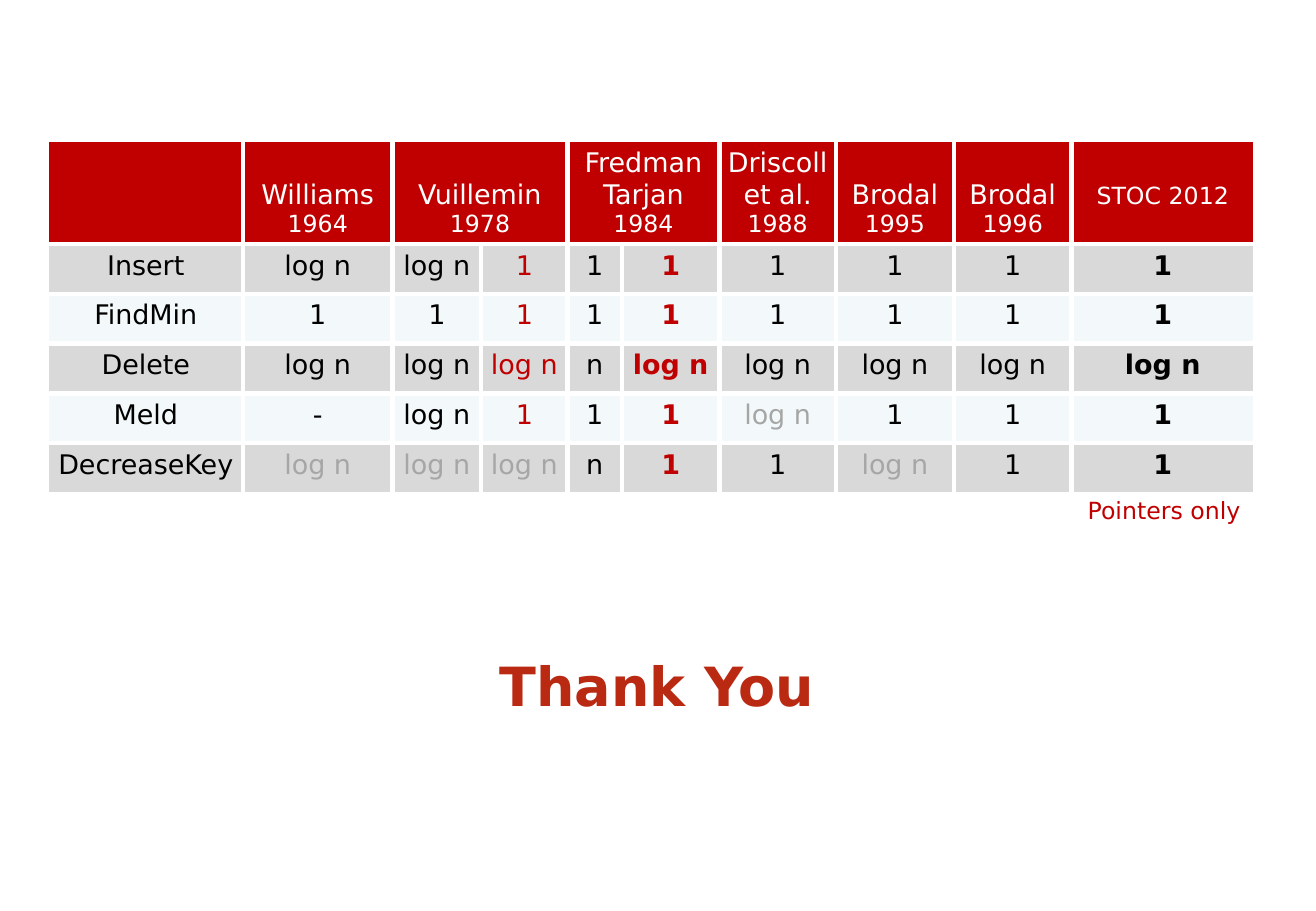
import pptx
import pptx.dml.color
import pptx.enum.text
import pptx.oxml
import pptx.oxml.ns
import pptx.util
from pptx.util import Inches

COLORS = {
    "header": "C00000", "band": "D9D9D9", "plain": "F3F9FA", "white": "FFFFFF",
    "black": "000000", "red": "C00000", "grey": "A6A6A6", "title": "BA2A12",
}
ANCHOR = pptx.enum.text.MSO_ANCHOR


def rgb(name):
    return pptx.dml.color.RGBColor.from_string(COLORS[name])


def write_lines(frame, lines, color, bold=False):
    """Write centred paragraphs from (text, size) pairs."""
    for index, (text, size) in enumerate(lines):
        para = frame.paragraphs[0] if index == 0 else frame.add_paragraph()
        para.alignment = pptx.enum.text.PP_ALIGN.CENTER
        span = para.add_run()
        span.text = text
        span.font.color.rgb = rgb(color)
        font_format = {"name": "DejaVu Sans", "size": pptx.util.Pt(size), "bold": bold}
        for key, value in font_format.items():
            setattr(span.font, key, value)


deck = pptx.Presentation()
deck.slide_width, deck.slide_height = Inches(10.83), Inches(7.5)
slide = deck.slides.add_slide(deck.slide_layouts[6])

# Table contents: header by first column, then one row per operation
headers = {
    1: [("Williams", 16), ("1964", 14)],
    2: [("Vuillemin", 16), ("1978", 14)],
    4: [("Fredman", 16), ("Tarjan", 16), ("1984", 14)],
    6: [("Driscoll", 16), ("et al.", 16), ("1988", 14)],
    7: [("Brodal", 16), ("1995", 14)],
    8: [("Brodal", 16), ("1996", 14)],
    9: [("STOC 2012", 14)],
}
operations = [
    ["Insert", "log n", "log n", "1", "1", "1", "1", "1", "1", "1"],
    ["FindMin", "1", "1", "1", "1", "1", "1", "1", "1", "1"],
    ["Delete", "log n", "log n", "log n", "n", "log n", "log n", "log n", "log n", "log n"],
    ["Meld", "-", "log n", "1", "1", "1", "log n", "1", "1", "1"],
    ["DecreaseKey", "log n", "log n", "log n", "n", "1", "1", "log n", "1", "1"],
]
grey_cells = {(4, 6), (5, 1), (5, 2), (5, 3), (5, 7)}
red_columns, bold_columns = {3, 5}, {5, 9}
column_widths = [1.6, 1.23, 0.73, 0.71, 0.45, 0.8, 0.96, 0.97, 0.97, 1.5]
row_heights = [0.85] + [0.41] * len(operations)
last_row, last_column = len(row_heights) - 1, len(column_widths) - 1

# Table grid
table = slide.shapes.add_table(
    len(row_heights), len(column_widths),
    Inches(0.4), Inches(1.16), Inches(9.93), Inches(2.9)).table
table.first_row = table.horz_banding = False
for column, width in zip(table.columns, column_widths):
    column.width = Inches(width)
for row, height in zip(table.rows, row_heights):
    row.height = Inches(height)
for first in (2, 4):
    table.cell(0, first).merge(table.cell(0, first + 1))

# Cells: margins, borders, fill and text
for r in range(last_row + 1):
    for c in range(last_column + 1):
        cell = table.cell(r, c)
        cell_format = {
            "margin_left": Inches(0.04), "margin_right": Inches(0.04),
            "margin_top": Inches(0.05), "margin_bottom": Inches(0.05),
            "vertical_anchor": ANCHOR.TOP if r else ANCHOR.BOTTOM,
        }
        if (r, c) == (0, last_column):
            cell_format["margin_bottom"] = Inches(0.28)
        for key, value in cell_format.items():
            setattr(cell, key, value)

        outer_edges = {"L": c == 0, "R": c == last_column, "T": r == 0, "B": r == last_row}
        for side, outer in outer_edges.items():
            width = pptx.util.Pt(1 if outer else 3)
            cell._tc.get_or_add_tcPr().append(pptx.oxml.parse_xml(
                f'<a:ln{side} {pptx.oxml.ns.nsdecls("a")} w="{width}"><a:solidFill>'
                f'<a:srgbClr val="{COLORS["white"]}"/></a:solidFill></a:ln{side}>'))

        cell.fill.solid()
        cell.fill.fore_color.rgb = rgb("header" if r == 0 else "band" if r % 2 else "plain")

        if r == 0:
            write_lines(cell.text_frame, headers.get(c, []), "white")
        else:
            color = "grey" if (r, c) in grey_cells else "red" if c in red_columns else "black"
            write_lines(cell.text_frame, [(operations[r - 1][c], 16)], color, c in bold_columns)

# Note under the table and closing title
captions = [
    ("Pointers only", 14, "red", False, ANCHOR.TOP, (8.82, 4.03, 1.52, 0.34)),
    ("Thank You", 32, "title", True, ANCHOR.MIDDLE, (0.53, 5.25, 9.75, 0.77)),
]
for text, size, color, bold, anchor, place in captions:
    box = slide.shapes.add_textbox(*map(Inches, place))
    box.text_frame.word_wrap = True
    box.text_frame.vertical_anchor = anchor
    write_lines(box.text_frame, [(text, size)], color, bold)

deck.save("out.pptx")
